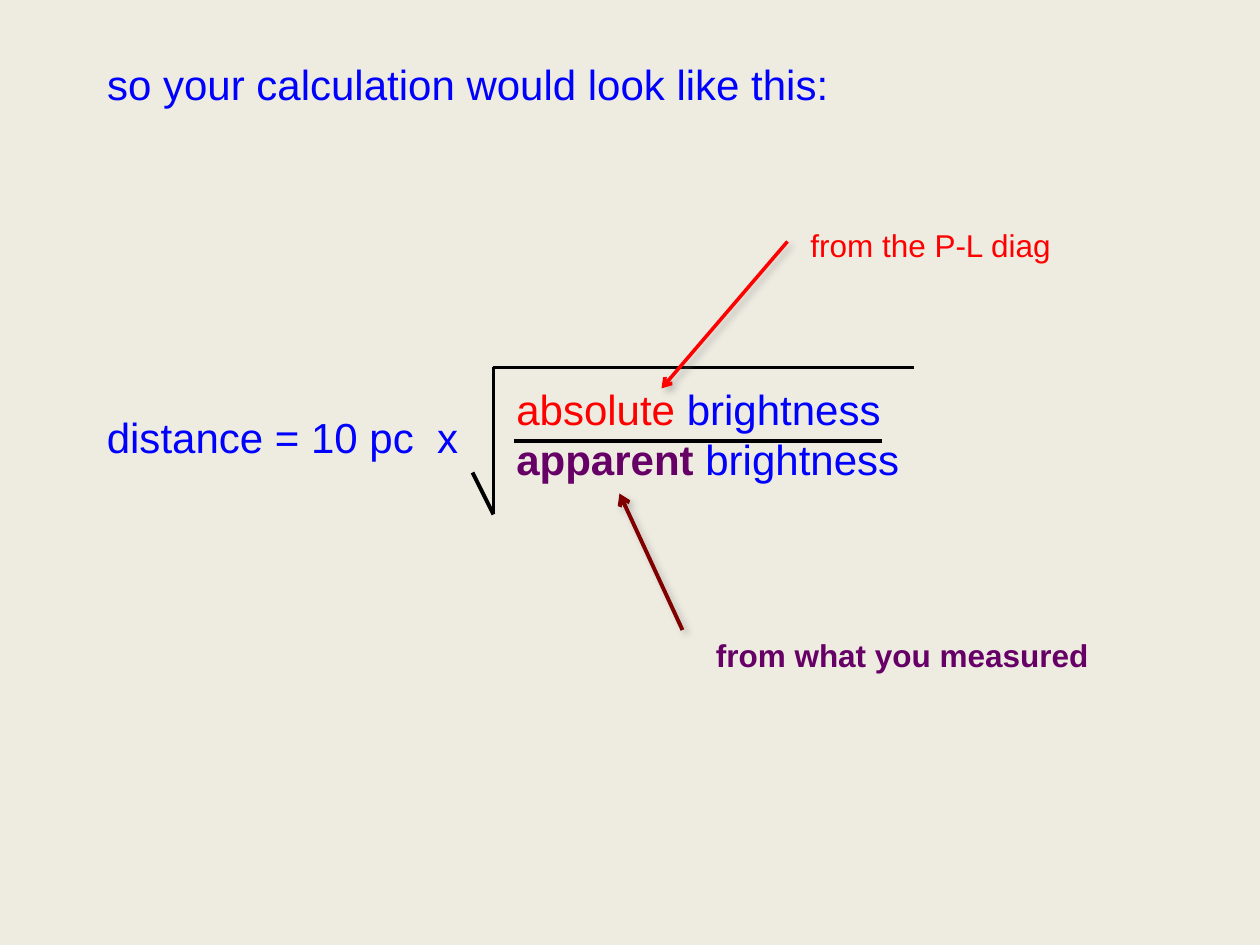
from itertools import pairwise

from lxml import etree
from pptx import Presentation
from pptx.dml.color import RGBColor
from pptx.enum.shapes import MSO_CONNECTOR as Connector
from pptx.enum.text import MSO_ANCHOR as Anchor, PP_ALIGN as Align
from pptx.oxml.ns import qn
from pptx.util import Inches, Pt

COLUMNS, ROWS = 120, 90
WIDTH, HEIGHT = Inches(10), Inches(7.5)
BLUE, RED, PURPLE, MAROON, BLACK = "0000FF", "FF0000", "660066", "800000", "000000"
LINE_PITCH = 1.19


def color(value):
    return RGBColor.from_string(value)


def across(columns):
    return round(WIDTH * columns / COLUMNS)


def down(rows):
    return round(HEIGHT * rows / ROWS)


def place(shape, box):
    left, top, width, height = box
    values = {"left": across(left), "top": down(top),
              "width": across(width), "height": down(height)}
    for name, value in values.items():
        setattr(shape, name, value)


def write(shape, lines, size):
    frame = shape.text_frame
    frame.word_wrap = True
    frame.vertical_anchor = Anchor.TOP
    for index, spans in enumerate(lines):
        para = frame.paragraphs[0] if index == 0 else frame.add_paragraph()
        layout = {"alignment": Align.LEFT, "space_before": Pt(0),
                  "line_spacing": Pt(size * LINE_PITCH)}
        for name, value in layout.items():
            setattr(para, name, value)
        for text, shade, bold in spans:
            span = para.add_run()
            span.text = text
            style = {"name": "Arial", "size": Pt(size), "bold": bold}
            for name, value in style.items():
                setattr(span.font, name, value)
            span.font.color.rgb = color(shade)


def add_text(page, box, lines, size):
    shape = page.shapes.add_textbox(0, 0, 0, 0)
    place(shape, box)
    write(shape, lines, size)


def add_line(page, start, end, shade, weight):
    line = page.shapes.add_connector(
        Connector.STRAIGHT, across(start[0]), down(start[1]), across(end[0]), down(end[1]))
    line.line.color.rgb = color(shade)
    line.line.width = Pt(weight)
    effects = etree.SubElement(line._element.spPr, qn("a:effectLst"))
    return line, effects


def add_arrow(page, start, end, shade, weight):
    line, effects = add_line(page, start, end, shade, weight)
    etree.SubElement(line.line._get_or_add_ln(), qn("a:tailEnd"), type="arrow")
    shadow = etree.SubElement(effects, qn("a:outerShdw"), blurRad=str(Pt(4)),
                              dist=str(Pt(3)), dir=str(45 * 60000))
    tint = etree.SubElement(shadow, qn("a:srgbClr"), val="808080")
    etree.SubElement(tint, qn("a:alpha"), val="43000")


def add_title(page, box):
    place(page.shapes.title, box)
    write(page.shapes.title, [[("so your calculation would look like this:", BLUE, False)]], 24)


def add_equation(page, box):
    left, top, width, height = box
    root = left + 38
    add_text(page, (left, top + 3.6, 37, 6),
             [[("distance = 10 pc  x", BLUE, False)]], 24)
    add_text(page, (root + 1, top + 1, 47, 11),
             [[("absolute ", RED, False), ("brightness", BLUE, False)],
              [("apparent ", PURPLE, True), ("brightness", BLUE, False)]], 24)
    radical = [(root - 2, top + 10), (root, top + height),
               (root, top), (left + width, top)]
    for start, end in pairwise(radical):
        add_line(page, start, end, BLACK, 2.25)
    add_line(page, (root + 2, top + 7), (left + width - 3, top + 7), BLACK, 1.75)


def add_note(page, box, text, shade, bold, arrow):
    left, top = box[:2]
    start, end, arrow_shade, weight = arrow
    points = [(left + x, top + y) for x, y in (start, end)]
    add_arrow(page, *points, arrow_shade, weight)
    add_text(page, box, [[(text, shade, bold)]], 18)


def main():
    deck = Presentation()
    deck.slide_width, deck.slide_height = WIDTH, HEIGHT
    page = deck.slides.add_slide(deck.slide_layouts[5])
    page.background.fill.solid()
    page.background.fill.fore_color.rgb = color("EEECE1")
    add_title(page, (9, 5, 83, 6))
    add_equation(page, (9, 35, 78, 14))
    add_note(page, (76, 21, 36, 6), "from the P-L diag", RED, False,
             ((-1, 2), (-13, 16), RED, 2))
    add_note(page, (67, 60, 41, 11), "from what you measured", PURPLE, True,
             ((-2, 0), (-8, -13), MAROON, 2.25))
    deck.save("out.pptx")


if __name__ == "__main__":
    main()
